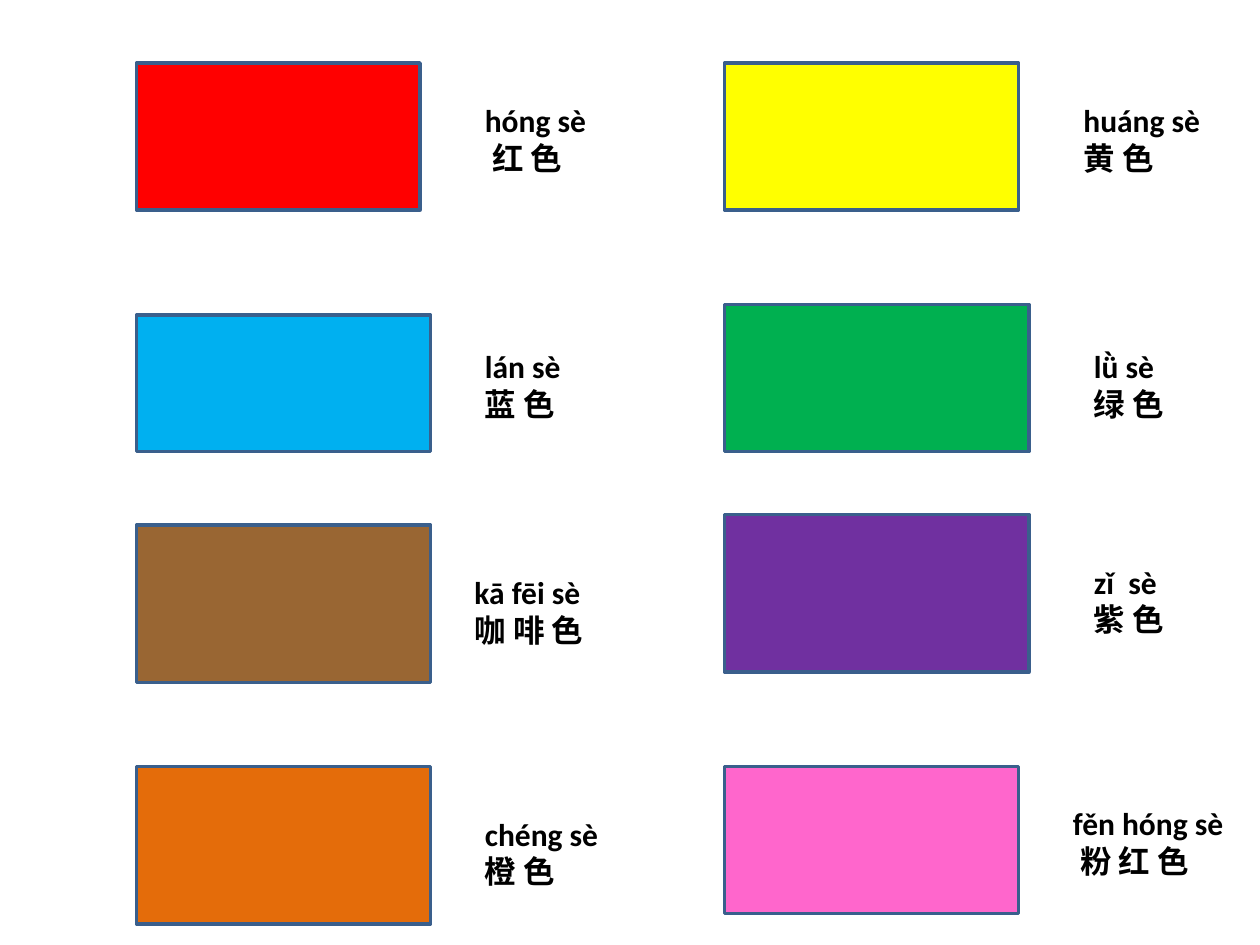
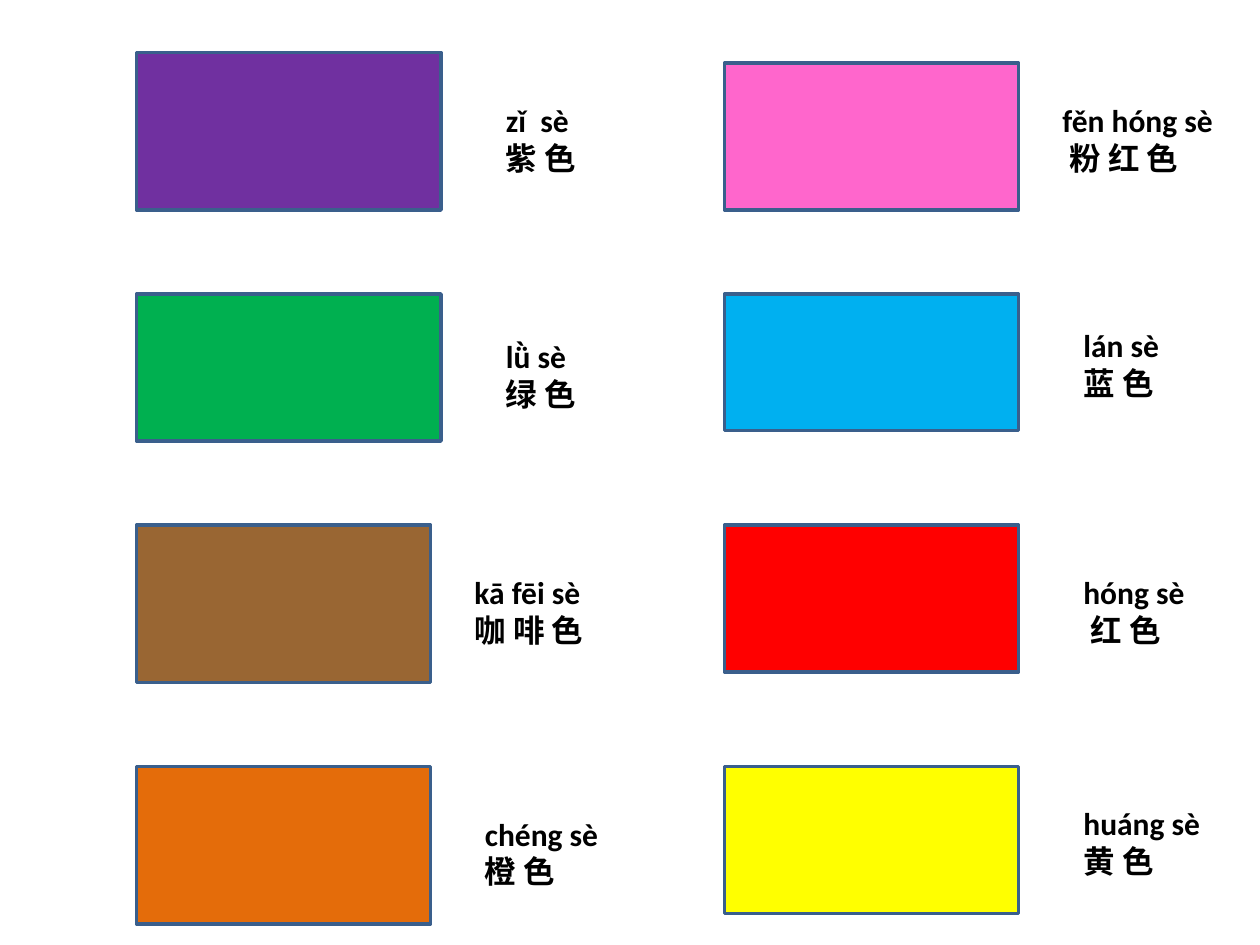
from dataclasses import dataclass

from pptx import Presentation
from pptx.dml.color import RGBColor
from pptx.enum.shapes import MSO_SHAPE
from pptx.enum.text import MSO_AUTO_SIZE
from pptx.slide import Slide
from pptx.util import Inches, Length, Pt

# Grid: 120 columns by 90 rows, so one cell is 1/12 inch
WIDTH, HEIGHT = Inches(10), Inches(7.5)
COLS, ROWS = 120, 90
LEFT, RIGHT = 13, 69  # first grid column of each column of swatches
TALL = 8.5  # rows a label takes

HEX = {
    "red": "FF0000",
    "yellow": "FFFF00",
    "blue": "00B0F0",
    "green": "00B050",
    "brown": "996633",
    "purple": "7030A0",
    "orange": "E46C0A",
    "pink": "FF66CC",
    "edge": "3A5F8C",
    "ink": "000000",
}


@dataclass(frozen=True)
class Color:
    pinyin: str
    hanzi: str
    rows: int  # swatch height
    span: int  # label width in columns
    kind: MSO_SHAPE = MSO_SHAPE.FLOWCHART_PROCESS


@dataclass(frozen=True)
class Spot:
    name: str
    left: int
    top: int
    cols: int  # swatch width
    tab: int  # label column
    drop: float  # rows from swatch top to label top


COLORS = {
    "red": Color("hóng sè", " 红 色", 14, 18, MSO_SHAPE.RECTANGLE),
    "yellow": Color("huáng sè", "黄 色", 14, 16),
    "blue": Color("lán sè", "蓝 色", 13, 18),
    "green": Color("lǜ sè", "绿 色", 14, 15),
    "brown": Color("kā fēi sè", "咖 啡 色", 15, 16),
    "purple": Color("zǐ  sè", "紫 色", 15, 14),
    "orange": Color("chéng sè", "橙 色", 15, 16),
    "pink": Color("fěn hóng sè", " 粉 红 色", 14, 20),
}

# Both slides end their left column with the same two colors
SHARED = [
    Spot("brown", LEFT, 50, 28, 44, 4),
    Spot("orange", LEFT, 73, 28, 45, 4),
]
PAGES = [
    [
        Spot("red", LEFT, 6, 27, 45, 3),
        Spot("yellow", RIGHT, 6, 28, 102, 3),
        Spot("blue", LEFT, 30, 28, 45, 2.5),
        Spot("green", RIGHT, 29, 29, 103, 3.5),
        Spot("purple", RIGHT, 49, 29, 103, 4),
        Spot("pink", RIGHT, 73, 28, 101, 3),
        *SHARED,
    ],
    [
        Spot("purple", LEFT, 5, 29, 47, 4),
        Spot("pink", RIGHT, 6, 28, 100, 3),
        Spot("green", LEFT, 28, 29, 47, 3.5),
        Spot("blue", RIGHT, 28, 28, 102, 2.5),
        Spot("red", RIGHT, 50, 28, 102, 4),
        Spot("yellow", RIGHT, 73, 28, 102, 3),
        *SHARED,
    ],
]


def rgb(name: str) -> RGBColor:
    return RGBColor.from_string(HEX[name])


def box(left: float, top: float, cols: float, rows: float) -> list[Length]:
    """Turn grid cells into left, top, width and height."""
    wide, high = WIDTH / COLS, HEIGHT / ROWS
    return [Length(round(n)) for n in
            (left * wide, top * high, cols * wide, rows * high)]


def swatch(slide: Slide, spot: Spot) -> None:
    color = COLORS[spot.name]
    place = box(spot.left, spot.top, spot.cols, color.rows)
    shape = slide.shapes.add_shape(color.kind, *place)
    shape.shadow.inherit = False
    shape.fill.solid()
    shape.fill.fore_color.rgb = rgb(spot.name)
    shape.line.color.rgb = rgb("edge")
    shape.line.width = Pt(2)


def label(slide: Slide, spot: Spot) -> None:
    color = COLORS[spot.name]
    place = box(spot.tab, spot.top + spot.drop, color.span, TALL)
    frame = slide.shapes.add_textbox(*place).text_frame
    frame.word_wrap = True
    frame.auto_size = MSO_AUTO_SIZE.SHAPE_TO_FIT_TEXT
    frame.text = f"{color.pinyin}\n{color.hanzi}"
    for line in frame.paragraphs:
        line.font.name = "Calibri"
        line.font.size = Pt(18)
        line.font.bold = True
        line.font.color.rgb = rgb("ink")


def main() -> None:
    deck = Presentation()
    deck.slide_width, deck.slide_height = WIDTH, HEIGHT
    blank = deck.slide_layouts.get_by_name("Blank")
    for page in PAGES:
        slide = deck.slides.add_slide(blank)
        # Swatches lie behind all labels
        for draw in (swatch, label):
            for spot in page:
                draw(slide, spot)
    deck.save("out.pptx")


if __name__ == "__main__":
    main()
